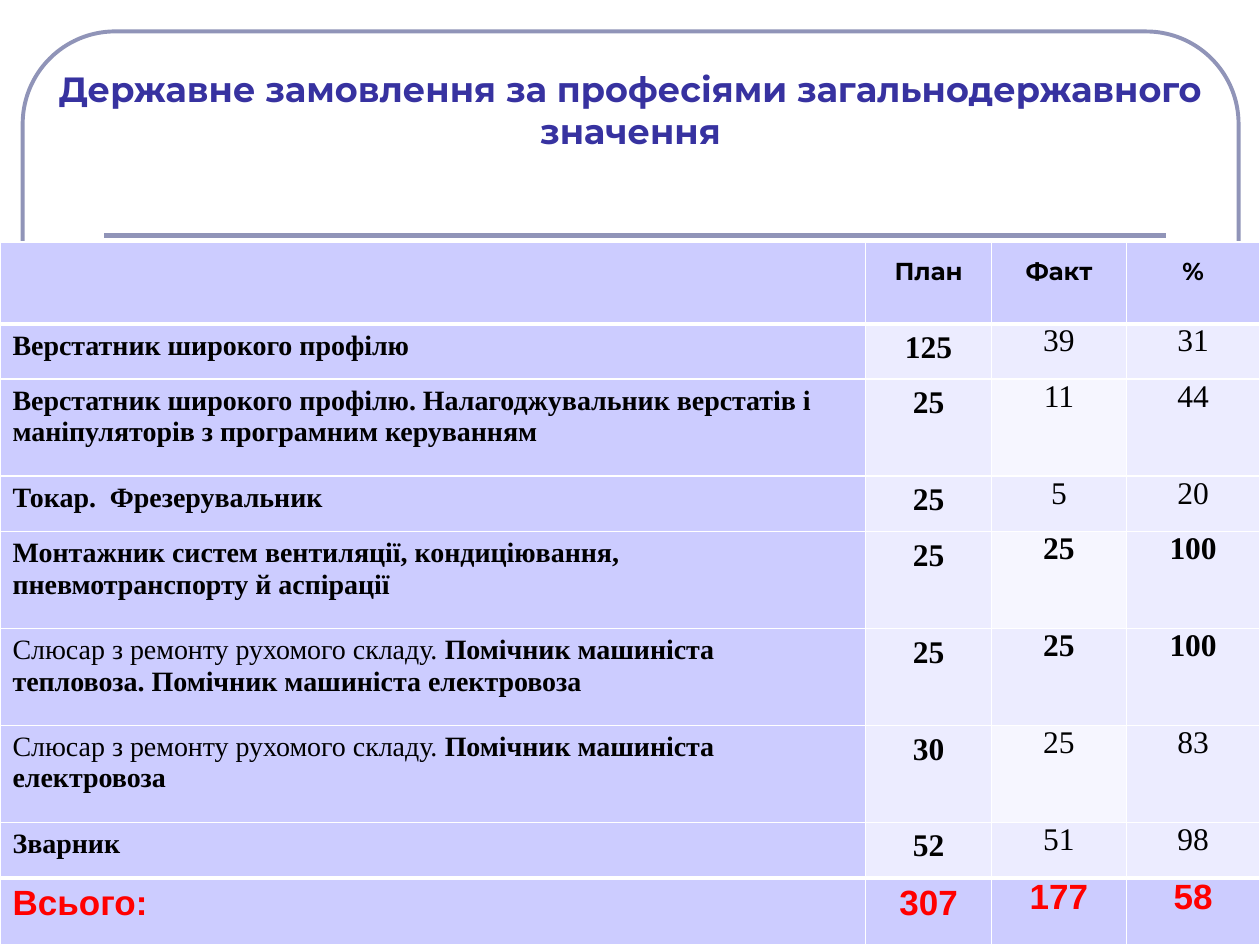
import pptx
import pptx.util
import pptx.dml.color
import pptx.enum.shapes
import pptx.enum.text
import pptx.oxml
import pptx.oxml.ns

W, H = 10, 7.5
COLS = [6.87, 1, 1.07, 1.06]
ROWS = [0.65, 0.44, 0.77, 0.44, 0.77, 0.77, 0.77, 0.44, 0.53]
SERIF = "Times New Roman"
REPAIR = "Слюсар з ремонту рухомого складу. "
HEADER = ["План", "Факт", "%"]
JOBS = [
    ("", "Верстатник широкого профілю", 125, 39, 31),
    ("", "Верстатник широкого профілю. Налагоджувальник верстатів і "
         "маніпуляторів з програмним керуванням", 25, 11, 44),
    ("", "Токар.  Фрезерувальник", 25, 5, 20),
    ("", "Монтажник систем вентиляції, кондиціювання, "
         "пневмотранспорту й аспірації", 25, 25, 100),
    (REPAIR, "Помічник машиніста тепловоза. Помічник машиніста електровоза", 25, 25, 100),
    (REPAIR, "Помічник машиніста електровоза", 30, 25, 83),
    ("", "Зварник", 52, 51, 98),
]
TOTAL = ["Всього:", "307", "177", "58"]


def rgb(value):
    """Return the colour for a hex string."""
    return pptx.dml.color.RGBColor.from_string(value)


def inches(*values):
    """Convert several lengths to EMU."""
    return [pptx.util.Inches(v) for v in values]


def format_run(r, size, font, color="000000", bold=True):
    """Set the look of one run."""
    r.font.size = pptx.util.Pt(size)
    r.font.name = font
    r.font.bold = bold
    r.font.color.rgb = rgb(color)


def set_borders(cell, top, bottom):
    """Draw white borders round a cell, with given top and bottom widths."""
    tcPr = cell._tc.get_or_add_tcPr()
    for side, width in zip("LRTB", (1, 1, top, bottom)):
        tcPr.append(pptx.oxml.parse_xml(
            f'<a:ln{side} {pptx.oxml.ns.nsdecls("a")} w="{pptx.util.Pt(width)}">'
            f'<a:solidFill><a:srgbClr val="FFFFFF"/></a:solidFill></a:ln{side}>'))


def fill_cell(cell, parts, size, font, color="000000", centered=True, tight=True):
    """Write (text, bold) parts into a cell."""
    if tight:
        cell.margin_left = cell.margin_right = pptx.util.Inches(0.07)
        cell.margin_top = cell.margin_bottom = 0
    p = cell.text_frame.paragraphs[0]
    if centered:
        p.alignment = pptx.enum.text.PP_ALIGN.CENTER
    for text, bold in parts:
        r = p.add_run()
        r.text = text
        format_run(r, size, font, color, bold)
    return p


def add_frame(s, x, y, w, h):
    """Draw the rounded frame and the rule under the title."""
    sp = s.shapes.add_shape(pptx.enum.shapes.MSO_SHAPE.ROUNDED_RECTANGLE, *inches(x, y, w, h))
    sp.adjustments[0] = 0.11
    sp.shadow.inherit = False
    sp.fill.background()
    sp.line.color.rgb = rgb("9094B8")
    sp.line.width = pptx.util.Pt(2.25)
    left, right, level = x + 0.067 * w, x + 0.94 * w, y + 0.243 * h
    rule = s.shapes.add_connector(pptx.enum.shapes.MSO_CONNECTOR.STRAIGHT,
                                  *inches(left, level, right, level))
    rule.line.color.rgb = rgb("9094B8")
    rule.line.width = pptx.util.Pt(3)
    rule._element.spPr.append(pptx.oxml.parse_xml(
        f'<a:effectLst {pptx.oxml.ns.nsdecls("a")}/>'))


def add_title(s, x, y, w, h):
    """Place the heading, resting on the bottom of its box."""
    tf = s.shapes.add_textbox(*inches(x, y, w, h)).text_frame
    tf.word_wrap = True
    tf.vertical_anchor = pptx.enum.text.MSO_ANCHOR.BOTTOM
    tf.text = "Державне замовлення за професіями загальнодержавного значення"
    p = tf.paragraphs[0]
    p.alignment = pptx.enum.text.PP_ALIGN.CENTER
    format_run(p.runs[0], 20, "Montserrat", "3732A0")


def add_orders(s, x, y, w, h):
    """Build the table of state orders by profession."""
    table = s.shapes.add_table(len(ROWS), len(COLS), *inches(x, y, w, h)).table
    table.first_row = table.horz_banding = False
    for column, share in zip(table.columns, COLS):
        column.width = pptx.util.Inches(w * share / sum(COLS))
    for row, share in zip(table.rows, ROWS):
        row.height = pptx.util.Inches(h * share / sum(ROWS))
    last = len(ROWS) - 1
    for i in range(len(ROWS)):
        for j in range(len(COLS)):
            cell = table.cell(i, j)
            set_borders(cell, 3 if i in (1, last) else 1, 3 if i in (0, last - 1) else 1)
            cell.fill.solid()
            if j == 0 or i in (0, last):
                color = "CCCCFF"
            else:
                color = "F6F6FF" if j == 2 and i % 2 == 0 else "ECECFF"
            cell.fill.fore_color.rgb = rgb(color)
    for j, text in enumerate(HEADER, 1):
        fill_cell(table.cell(0, j), [(text, True)], 14, "Montserrat").line_spacing = 1.5
    for i, (plain, strong, *numbers) in enumerate(JOBS, 1):
        parts = [(plain, False)] if plain else []
        fill_cell(table.cell(i, 0), parts + [(strong, True)], 16, SERIF,
                  centered=False, tight=False)
        for j, number in enumerate(numbers, 1):
            bold = j == 1 or numbers[2] == 100
            fill_cell(table.cell(i, j), [(str(number), bold)], 18, SERIF, tight=j > 1)
    for j, text in enumerate(TOTAL):
        fill_cell(table.cell(last, j), [(text, True)], 20, "Arial", "FF0000",
                  centered=j > 0, tight=j > 1)


def main():
    """Build the slide and save it."""
    prs = pptx.Presentation()
    prs.slide_width, prs.slide_height = inches(W, H)
    s = prs.slides.add_slide(prs.slide_layouts[6])
    add_frame(s, 0.18, 0.25, 9.65, 6.67)
    add_title(s, 0.17, 0.67, 9.67, 0.58)
    add_orders(s, 0, H - sum(ROWS), W, sum(ROWS))
    prs.save("out.pptx")


if __name__ == "__main__":
    main()
